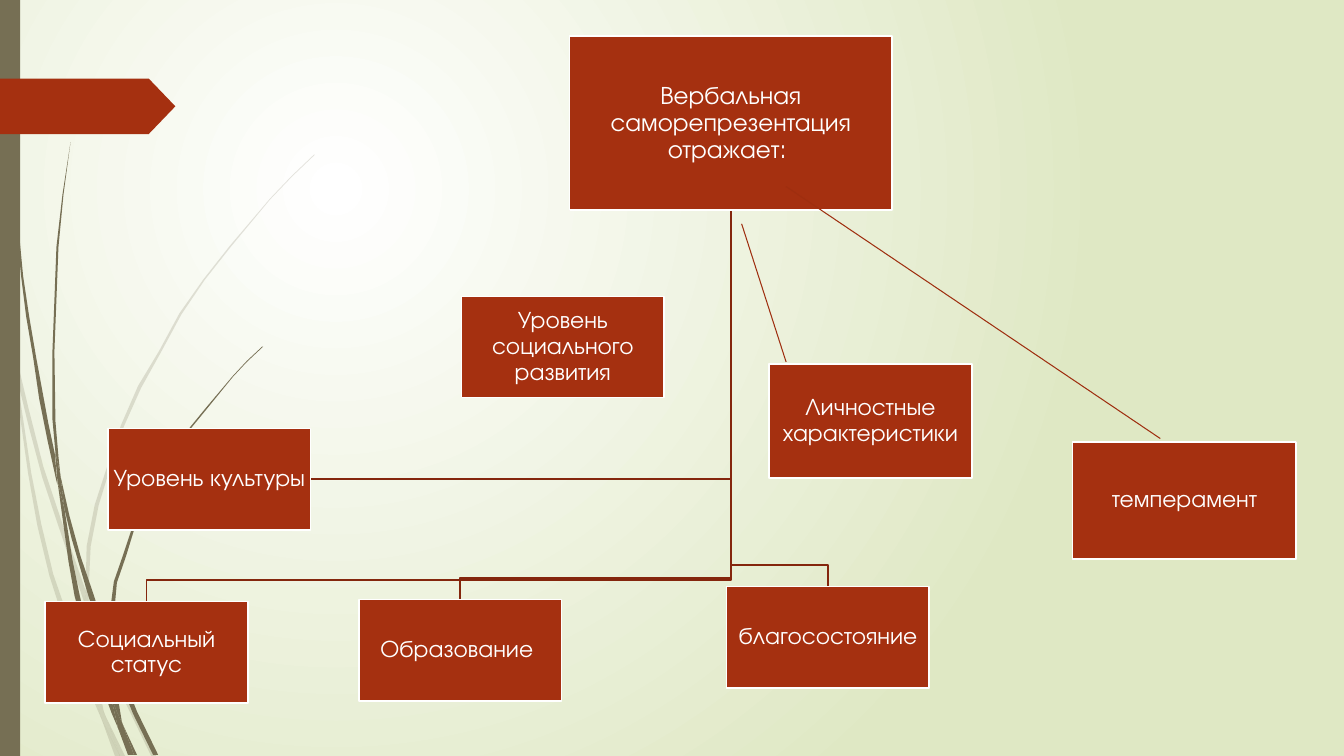
from typing import Any, NamedTuple

from lxml.etree import SubElement
from pptx import Presentation
from pptx.dml.color import RGBColor as RGB
from pptx.enum.shapes import MSO_CONNECTOR as CONN, MSO_SHAPE as SHAPE
from pptx.enum.text import MSO_ANCHOR as ANCHOR, PP_ALIGN as ALIGN
from pptx.oxml.ns import qn
from pptx.util import Cm, Pt

COLORS = {
    "white": "FFFFFF",
    "pale": "DFE8C4",
    "stem": "766F54",
    "brick": "A53010",
    "branch": "84260D",
    "link": "9E2E0F",
}
FONT = "TeX Gyre Adventor"
STEM_UNIT = Cm(0.0254)  # stem points are hundredths of an inch
BEND = Cm(0.54)  # height of the last step of a branch


class Box(NamedTuple):
    text: str
    left: float
    top: float
    width: float = 5.11
    height: float = 2.55
    size: int = 17


class Link(NamedTuple):
    x1: float
    y1: float
    x2: float
    y2: float


ROOT = Box("Вербальная саморепрезентация отражает: ", 14.35, 0.91, 8.13, 4.39, 18)
CULTURE = Box("Уровень культуры", 2.72, 10.8)
STATUS = Box("Социальный статус", 1.14, 15.16)
EDUCATION = Box("Образование ", 9.04, 15.11)
WELFARE = Box("благосостояние", 18.31, 14.78)
BOXES = [
    ROOT, STATUS, EDUCATION, WELFARE, CULTURE,
    Box("Уровень социального развития", 11.63, 7.47),
    Box("Личностные характеристики", 19.38, 9.17, height=2.87),
    Box("темперамент", 27.03, 11.13, 5.64, 2.95),
]
LINKS = [Link(18.69, 5.64, 19.81, 9.12), Link(19.81, 4.7, 29.24, 11.05)]

# Outlines of the grass stems
FAINT_STEMS = [
    [(11, 350), (9, 322), (0, 282), (0, 299), (10, 344)],
    [(58, 522), (84, 599), (85, 586), (62, 520), (43, 463), (28, 404), (14, 345),
     (17, 376), (29, 425), (42, 474)],
    [(92, 607), (88, 596), (88, 610), (123, 694), (150, 750), (155, 750), (127, 692)],
    [(119, 750), (124, 750), (105, 711)],
    [(93, 683), (70, 619), (53, 570), (41, 520), (31, 469), (17, 376), (11, 350),
     (28, 470), (37, 521), (49, 571), (65, 621), (92, 693), (101, 714), (99, 707)],
    [(84, 599), (87, 646), (93, 683), (96, 692), (105, 711), (103, 706), (91, 646),
     (88, 610), (88, 608)],
    [(88, 584), (90, 542), (98, 501), (110, 462), (123, 423), (140, 385), (160, 349),
     (180, 312), (203, 278), (229, 245), (268, 198), (290, 175), (312, 154),
     (312, 153), (289, 175), (268, 197), (228, 244), (202, 277), (178, 311),
     (158, 348), (137, 383), (120, 422), (107, 461), (94, 501), (86, 542),
     (85, 584), (85, 586), (88, 596)],
    [(101, 714), (114, 750), (119, 750)],
    [(88, 608), (88, 610), (88, 596), (85, 586), (84, 599)],
    [(96, 692), (93, 683), (99, 707), (101, 714), (119, 750), (105, 711)],
]
DARK_STEMS = [
    [(7, 110), (17, 233), (21, 274), (26, 314), (33, 355), (39, 396), (47, 436),
     (56, 477), (57, 481), (55, 457), (55, 453), (48, 420), (36, 355), (29, 314),
     (23, 274), (19, 232), (14, 191), (8, 109), (5, 48), (4, 0), (3, 0), (4, 48)],
    [(88, 592), (106, 645), (106, 631), (93, 590), (80, 552), (69, 512), (60, 472),
     (64, 505), (71, 534)],
    [(113, 649), (110, 641), (111, 656), (132, 708), (152, 749), (157, 749), (136, 706)],
    [(110, 691), (98, 657), (87, 624), (79, 590), (72, 556), (64, 505), (57, 477),
     (68, 557), (74, 591), (83, 625), (93, 659), (111, 708), (117, 722), (116, 717)],
    [(60, 472), (58, 453), (55, 418), (54, 349), (58, 245), (63, 193), (70, 141),
     (62, 193), (56, 245), (52, 349), (52, 416), (55, 449)],
    [(133, 749), (136, 749), (122, 719)],
    [(57, 477), (64, 505), (60, 472), (55, 449), (55, 453)],
    [(111, 633), (116, 578), (125, 552), (133, 526), (145, 500), (158, 476),
     (172, 451), (187, 428), (205, 406), (231, 374), (245, 359), (261, 344),
     (260, 344), (245, 358), (231, 373), (204, 405), (186, 427), (170, 450),
     (156, 474), (142, 499), (131, 524), (122, 551), (113, 577), (106, 631), (110, 641)],
    [(117, 722), (127, 749), (131, 749)],
    [(106, 645), (110, 691), (116, 706), (122, 719), (121, 716), (111, 656), (109, 651)],
    [(116, 706), (110, 691), (116, 717), (117, 722), (130, 749), (133, 749), (122, 719)],
]


def rgb(name: str) -> RGB:
    return RGB.from_string(COLORS[name])


def set_all(target: Any, values: dict[str, Any]) -> None:
    for name, value in values.items():
        setattr(target, name, value)


def paint(sp: Any, fill: str | None, line: str | None = None) -> None:
    sp.shadow.inherit = False
    if fill:
        sp.fill.solid()
        sp.fill.fore_color.rgb = rgb(fill)
    else:
        sp.fill.background()
    if line:
        sp.line.color.rgb = rgb(line)
        sp.line.width = Pt(1.25)
    else:
        sp.line.fill.background()


def draw_background(slide: Any) -> None:
    fill = slide.background.fill
    fill.gradient()
    for stop, name in zip(fill.gradient_stops, ("white", "pale")):
        stop.color.rgb = rgb(name)
    # Replace the linear direction with a circular one
    grad = slide._element.find(".//" + qn("a:gradFill"))
    grad.remove(grad.find(qn("a:lin")))
    circle = SubElement(grad, qn("a:path"), {"path": "circle"})
    SubElement(circle, qn("a:fillToRect"), l="50000", t="50000", r="100000", b="100000")


def draw_stems(shapes: Any, stems: list[list[tuple[int, int]]], alpha: int = 100) -> None:
    group = shapes.add_group_shape()
    for start, *rest in stems:
        builder = group.shapes.build_freeform(*start, scale=STEM_UNIT)
        builder.add_line_segments(rest, close=True)
        sp = builder.convert_to_shape()
        paint(sp, "stem")
        if alpha < 100:
            clr = sp._element.spPr.find(".//" + qn("a:srgbClr"))
            SubElement(clr, qn("a:alpha"), val=str(alpha * 1000))


def draw_preset(shapes: Any, kind: SHAPE, place: tuple[float, ...], fill: str,
                line: str | None = None) -> Any:
    sp = shapes.add_shape(kind, *map(Cm, place))
    paint(sp, fill, line)
    return sp


def draw_branch(shapes: Any, box: Box) -> None:
    x, y = Cm(ROOT.left + ROOT.width / 2), Cm(ROOT.top + ROOT.height)
    if box is CULTURE:  # enters from the side
        mid = Cm(box.top + box.height / 2)
        points = [(x, mid), (Cm(box.left + box.width), mid)]
    else:
        end, top = Cm(box.left + box.width / 2), Cm(box.top)
        points = [(x, top - BEND), (end, top - BEND), (end, top)]
    builder = shapes.build_freeform(x, y)
    builder.add_line_segments(points, close=False)
    paint(builder.convert_to_shape(), None, "branch")


def draw_box(shapes: Any, box: Box) -> None:
    place = (box.left, box.top, box.width, box.height)
    sp = draw_preset(shapes, SHAPE.RECTANGLE, place, "brick", "white")
    tf = sp.text_frame
    sides = ("left", "top", "right", "bottom")
    set_all(tf, {f"margin_{side}": Cm(0.03) for side in sides})
    set_all(tf, {"word_wrap": True, "vertical_anchor": ANCHOR.MIDDLE})
    p = tf.paragraphs[0]
    set_all(p, {"alignment": ALIGN.CENTER, "line_spacing": 0.9})
    r = p.add_run()
    r.text = box.text
    set_all(r.font, {"name": FONT, "size": Pt(box.size)})
    r.font.color.rgb = rgb("white")


def draw_link(shapes: Any, link: Link) -> None:
    cx = shapes.add_connector(CONN.STRAIGHT, *map(Cm, link))
    cx.line.color.rgb = rgb("link")
    cx.line.width = Pt(0.75)
    SubElement(cx._element.spPr, qn("a:effectLst"))


def main() -> None:
    prs = Presentation()
    set_all(prs, {"slide_width": Cm(33.87), "slide_height": Cm(19.05)})
    slide = prs.slides.add_slide(prs.slide_layouts[6])
    shapes = slide.shapes

    # Backdrop: gradient, grass, side bar and tag
    draw_background(slide)
    draw_stems(shapes, FAINT_STEMS, alpha=20)
    draw_stems(shapes, DARK_STEMS)
    draw_preset(shapes, SHAPE.RECTANGLE, (0, 0, 0.51, 19.05), "stem")
    tag = draw_preset(shapes, SHAPE.PENTAGON, (0, 1.98, 4.42, 1.4), "brick")
    tag.adjustments[0] = 0.48

    # Diagram: branches under the boxes, loose links on top
    for box in (CULTURE, WELFARE, EDUCATION, STATUS):
        draw_branch(shapes, box)
    for box in BOXES:
        draw_box(shapes, box)
    for link in LINKS:
        draw_link(shapes, link)
    prs.save("out.pptx")


if __name__ == "__main__":
    main()
